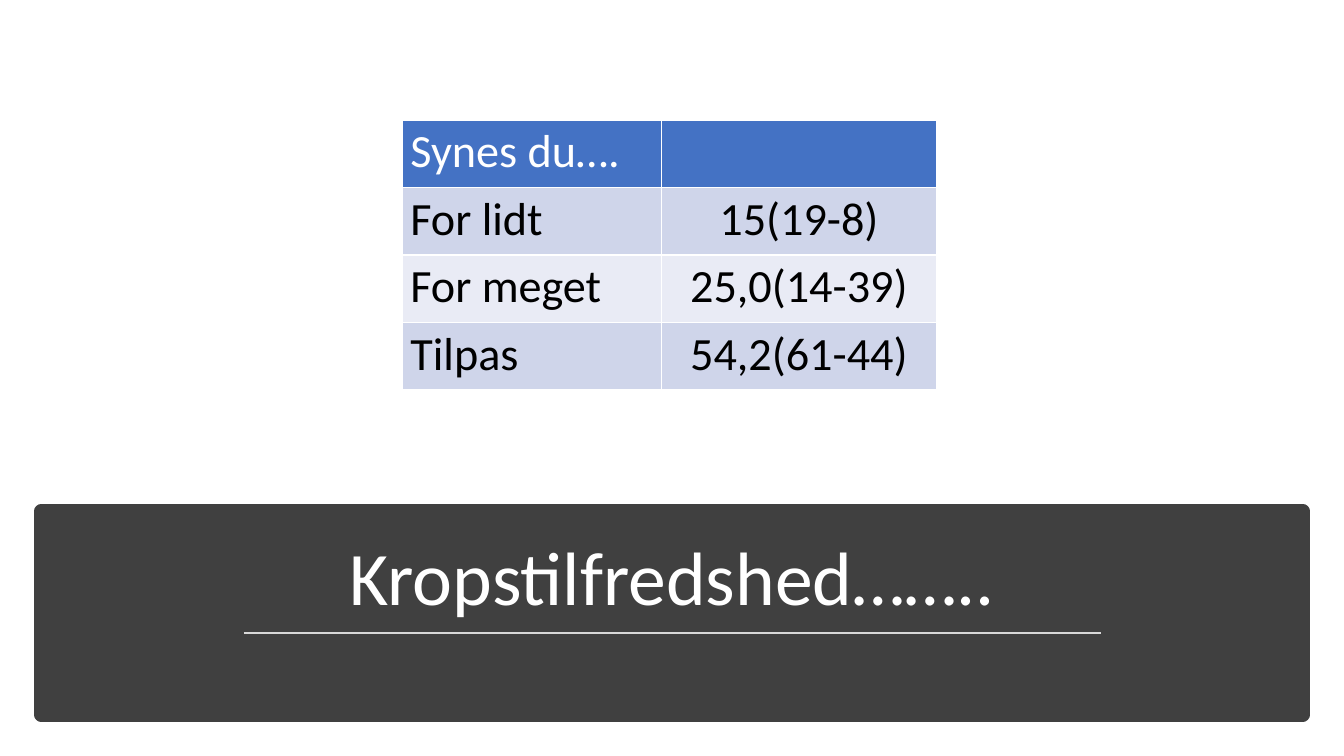
from lxml import etree
from pptx import Presentation
from pptx import util as u
from pptx.dml.color import RGBColor
from pptx.enum import shapes, text
from pptx.oxml import ns

PX = 9144
WHITE = RGBColor(0xFF, 0xFF, 0xFF)
BLACK = RGBColor(0, 0, 0)
DARK = RGBColor(0x40, 0x40, 0x40)
GREY = RGBColor(0xD9, 0xD9, 0xD9)
BLUE = RGBColor(0x44, 0x72, 0xC4)
BANDS = (RGBColor(0xE9, 0xEB, 0xF5), RGBColor(0xCF, 0xD5, 0xEA))

ROWS = [
    ("Synes du….", ""),
    ("For lidt", "15(19-8)"),
    ("For meget", "25,0(14-39)"),
    ("Tilpas", "54,2(61-44)"),
]


class Page:
    font = "Calibri"

    def __init__(self, deck):
        self.slide = deck.slides.add_slide(deck.slide_layouts[6])
        self.shapes = self.slide.shapes

    def px(self, *nums):
        return [u.Emu(n * PX) for n in nums]

    def style(self, para, size, color, align):
        para.alignment = align
        for run in para.runs:
            run.font.name = self.font
            run.font.size = u.Pt(size)
            run.font.bold = False
            run.font.color.rgb = color

    def band(self, x, y, w, h, color, line):
        box = self.shapes.add_shape(shapes.MSO_SHAPE.RECTANGLE, *self.px(x, y, w, h))
        box.shadow.inherit = False
        box.fill.solid()
        box.fill.fore_color.rgb = color
        box.line.color.rgb = color
        box.line.width = u.Pt(line)

    def title(self, x, y, w, h, words, size, color):
        frame = self.shapes.add_textbox(*self.px(x, y, w, h)).text_frame
        frame.word_wrap = True
        frame.vertical_anchor = text.MSO_ANCHOR.BOTTOM
        frame.text = words
        para = frame.paragraphs[0]
        para.line_spacing = 0.9
        self.style(para, size, color, text.PP_ALIGN.CENTER)

    def rule(self, x, y, end, color, width):
        line = self.shapes.add_connector(
            shapes.MSO_CONNECTOR.STRAIGHT, *self.px(x, y, end, y))
        line.line.color.rgb = color
        line.line.width = u.Pt(width)
        etree.SubElement(line._element.spPr, ns.qn("a:effectLst"))

    def table(self, x, y, cols, high, rows, size):
        frame = self.shapes.add_table(
            len(rows), len(cols), *self.px(x, y, sum(cols), high * len(rows)))
        grid = frame.table
        for col, wide in zip(grid.columns, self.px(*cols)):
            col.width = wide
        for r, row in enumerate(rows):
            grid.rows[r].height = u.Emu(high * PX)
            for c, words in enumerate(row):
                cell = grid.cell(r, c)
                cell.margin_left, cell.margin_right = self.px(8, 8)
                cell.margin_top, cell.margin_bottom = self.px(4, 4)
                cell.fill.solid()
                cell.fill.fore_color.rgb = BANDS[r % 2] if r else BLUE
                if words:
                    cell.text_frame.text = words
                    align = text.PP_ALIGN.CENTER if c else text.PP_ALIGN.LEFT
                    self.style(cell.text_frame.paragraphs[0], size,
                               BLACK if r else WHITE, align)


def main():
    deck = Presentation()
    deck.slide_width = u.Inches(13.33)
    deck.slide_height = u.Inches(7.5)
    page = Page(deck)
    page.band(41, 507, 1251, 202, DARK, 10)
    page.title(58, 520, 1218, 102, "Kropstilfredshed……..", 54, WHITE)
    page.rule(242, 628, 1092, GREY, 1.75)
    page.table(399, 119, (257, 273), 67, ROWS, 33)
    deck.save("out.pptx")


if __name__ == "__main__":
    main()
